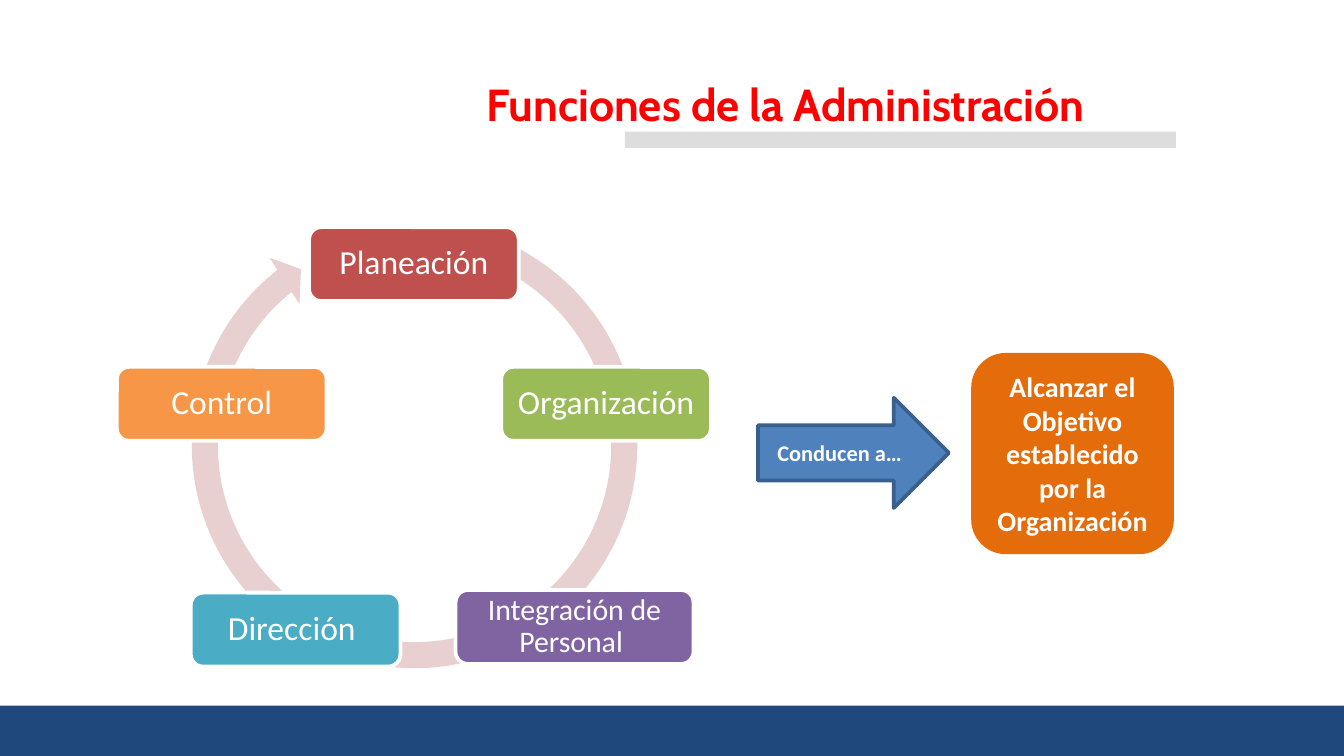
from dataclasses import dataclass

from pptx import Presentation
from pptx.dml.color import RGBColor
from pptx.enum.shapes import MSO_SHAPE as SHAPE
from pptx.enum.text import MSO_ANCHOR as ANCHOR, MSO_AUTO_SIZE as AUTO, PP_ALIGN as ALIGN
from pptx.util import Inches, Pt


@dataclass(frozen=True)
class Theme:
    """Colours, fonts and type sizes of the slide."""
    title_font: str = "Cabin"
    body_font: str = "Calibri"
    title: str = "FF0000"
    white: str = "FFFFFF"
    footer: str = "1F497D"
    rule: str = "DDDDDD"
    ring: str = "E8D0D0"
    red: str = "C0504D"
    green: str = "9BBB59"
    purple: str = "8064A2"
    teal: str = "4BACC6"
    orange: str = "F79646"
    arrow: str = "4F81BD"
    arrow_line: str = "3A5F8C"
    goal: str = "E46C0A"
    title_size: int = 24
    node_size: int = 18
    long_node_size: int = 16
    goal_size: int = 15
    arrow_size: int = 12


THEME = Theme()
SLIDE_W = 10
SLIDE_H = SLIDE_W * 9 / 16
FOOTER_TOP = 5.25
NODE_W, NODE_H = 1.56, 0.55
NODES = [
    ("Planeación", 2.3, 1.69, NODE_W, THEME.red, THEME.node_size),
    ("Organización ", 3.73, 2.73, NODE_W, THEME.green, THEME.node_size),
    ("Integración de Personal ", 3.39, 4.39, 1.77, THEME.purple, THEME.long_node_size),
    ("Dirección ", 1.42, 4.41, NODE_W, THEME.teal, THEME.node_size),
    ("Control", 0.87, 2.73, NODE_W, THEME.orange, THEME.node_size),
]


def add_shape(s, kind, box, fill, line=None):
    """Add a flat filled shape with an optional 2 pt outline."""
    sp = s.shapes.add_shape(kind, *map(Inches, box))
    sp.shadow.inherit = False
    sp.fill.solid()
    sp.fill.fore_color.rgb = RGBColor.from_string(fill)
    if line:
        sp.line.color.rgb = RGBColor.from_string(line)
        sp.line.width = Pt(2)
    else:
        sp.line.fill.background()
    return sp


def set_text(sp, text, size, color=THEME.white, font=THEME.body_font, bold=False, align=ALIGN.CENTER):
    """Write one vertically centred paragraph and return it."""
    tf = sp.text_frame
    tf.word_wrap = True
    tf.auto_size = AUTO.NONE
    tf.vertical_anchor = ANCHOR.MIDDLE
    p = tf.paragraphs[0]
    p.text = text
    p.alignment = align
    p.font.name = font
    p.font.size = Pt(size)
    p.font.bold = bold
    p.font.color.rgb = RGBColor.from_string(color)
    return p


def add_title(s, text):
    """Place and format the title placeholder."""
    sp = s.shapes.title
    sp.left, sp.top, sp.width, sp.height = map(Inches, (3.52, 0.52, 5.52, 0.5))
    set_text(sp, text, THEME.title_size, THEME.title, THEME.title_font, True, ALIGN.LEFT)


def add_ring(s):
    """Add the circular arrow behind the cycle."""
    sp = add_shape(s, SHAPE.CIRCULAR_ARROW, (1.32, 1.55, 3.53, 3.53), THEME.ring)
    for i, value in enumerate((0.055, 3.307, 139.014, 173.101, 0.058)):
        sp.adjustments[i] = value


def add_node(s, text, left, top, width, fill, size):
    """Add one labelled step of the cycle."""
    sp = add_shape(s, SHAPE.ROUNDED_RECTANGLE, (left, top, width, NODE_H), fill, THEME.white)
    tf = sp.text_frame
    tf.margin_left = tf.margin_right = tf.margin_top = tf.margin_bottom = Inches(0.07)
    set_text(sp, text, size).line_spacing = 0.9


def main():
    """Build and save the slide."""
    prs = Presentation()
    prs.slide_width, prs.slide_height = Inches(SLIDE_W), Inches(SLIDE_H)
    s = prs.slides.add_slide(prs.slide_layouts[5])
    add_shape(s, SHAPE.RECTANGLE, (0, FOOTER_TOP, SLIDE_W, SLIDE_H - FOOTER_TOP), THEME.footer)
    add_shape(s, SHAPE.RECTANGLE, (4.65, 0.98, 4.1, 0.12), THEME.rule)
    add_title(s, "Funciones de la Administración")
    add_ring(s)
    for node in NODES:
        add_node(s, *node)
    arrow = add_shape(s, SHAPE.RIGHT_ARROW, (5.64, 2.96, 1.42, 0.82), THEME.arrow, THEME.arrow_line)
    set_text(arrow, "Conducen a…", THEME.arrow_size, bold=True)
    goal = add_shape(s, SHAPE.ROUNDED_RECTANGLE, (7.24, 2.64, 1.48, 1.47), THEME.goal, THEME.goal)
    set_text(goal, "Alcanzar el Objetivo establecido por la Organización ", THEME.goal_size, bold=True)
    prs.save("out.pptx")


if __name__ == "__main__":
    main()
